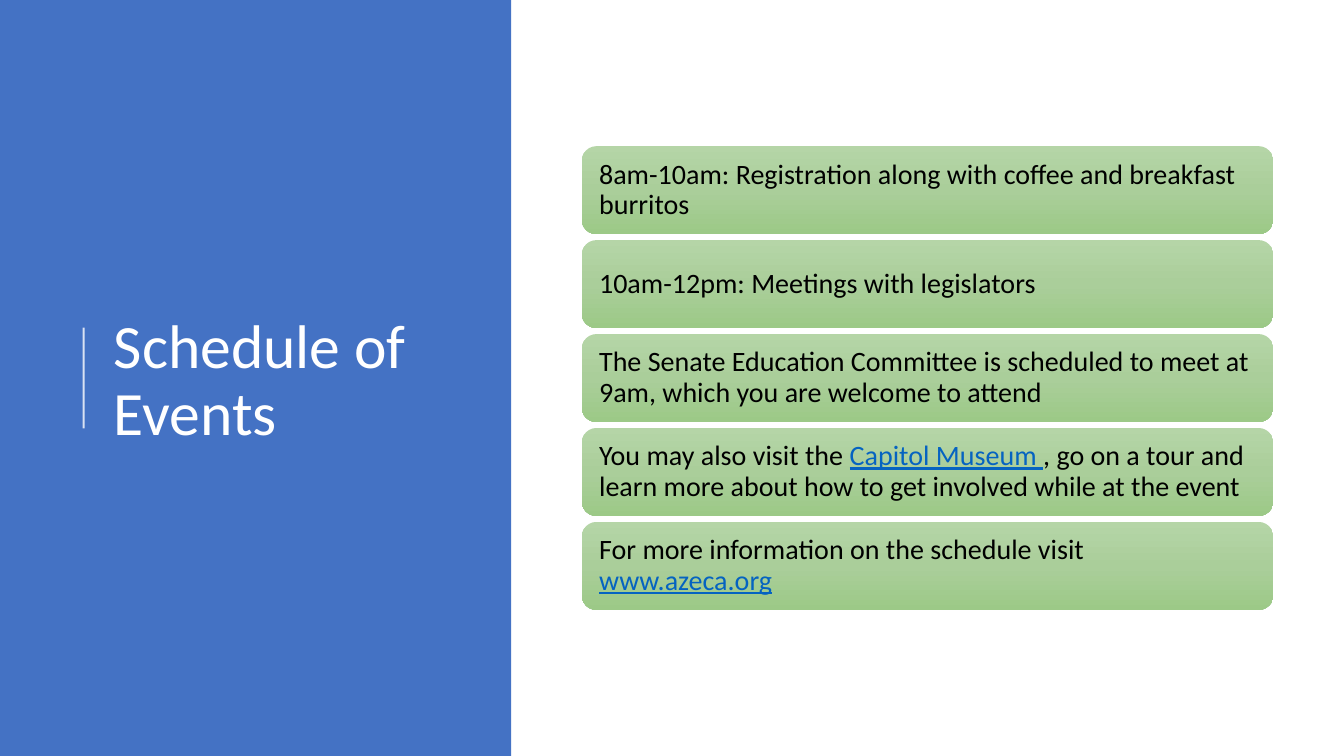
from copy import deepcopy
from dataclasses import dataclass

from lxml import etree
from pptx import Presentation
from pptx.dml.color import RGBColor
from pptx.enum.shapes import MSO_CONNECTOR, MSO_SHAPE
from pptx.enum.text import MSO_ANCHOR, PP_ALIGN
from pptx.oxml.ns import qn
from pptx.util import Inches, Pt


@dataclass(frozen=True)
class Theme:
    font: str = "Calibri"
    title_size: int = 44
    body_size: int = 20
    panel: str = "4472C4"
    light: str = "FFFFFF"
    dark: str = "000000"
    link: str = "0563C1"
    card: tuple = ("B5D5A7", "AACE9A", "9CC987")


THEME = Theme()

# Each event is a list of (text, is_link) pieces
EVENTS = [
    [("8am-10am: Registration along with coffee and breakfast burritos", False)],
    [("10am-12pm: Meetings with legislators", False)],
    [("The Senate Education Committee is scheduled to meet at 9am, "
      "which you are welcome to attend", False)],
    [("You may also visit the ", False), ("Capitol Museum ", True),
     (", go on a tour and learn more about how to get involved "
      "while at the event", False)],
    [("For more information on the schedule visit ", False),
     ("www.azeca.org", True)],
]


def color(value):
    return RGBColor.from_string(value)


def set_font(paragraph, size, value):
    paragraph.line_spacing = 0.9
    paragraph.alignment = PP_ALIGN.LEFT
    paragraph.font.name = THEME.font
    paragraph.font.size = Pt(size)
    paragraph.font.color.rgb = color(value)


def fill_gradient(card):
    """Three evenly spaced stops, from top to bottom."""
    card.fill.gradient()
    card.fill.gradient_angle = 270
    stop_list = card._element.spPr.find(".//" + qn("a:gsLst"))
    stop_list.insert(1, deepcopy(stop_list[0]))
    for index, stop in enumerate(card.fill.gradient_stops):
        stop.position = index / 2
        stop.color.rgb = color(THEME.card[index])


def add_title_panel(slide, left, top, width, height):
    # Coloured background
    panel = slide.shapes.add_shape(MSO_SHAPE.RECTANGLE, Inches(left),
                                   Inches(top), Inches(width), Inches(height))
    panel.shadow.inherit = False
    panel.fill.solid()
    panel.fill.fore_color.rgb = color(THEME.panel)
    panel.line.fill.background()

    # Accent rule, centred on the panel's height
    rule_x, middle = Inches(left + 0.83), top + height / 2
    rule = slide.shapes.add_connector(MSO_CONNECTOR.STRAIGHT,
                                      rule_x, Inches(middle + 0.5),
                                      rule_x, Inches(middle - 0.5))
    rule.line.width = Pt(1.5)
    rule.line.color.rgb = color(THEME.light)
    rule_color = rule._element.spPr.find(".//" + qn("a:srgbClr"))
    etree.SubElement(rule_color, qn("a:alpha"), val="80000")
    etree.SubElement(rule._element.spPr, qn("a:effectLst"))

    # Title
    title = slide.shapes.add_textbox(Inches(left + 1.03), Inches(top + 0.78),
                                     Inches(3.69), Inches(6.02))
    title.text_frame.word_wrap = True
    title.text_frame.vertical_anchor = MSO_ANCHOR.MIDDLE
    heading = title.text_frame.paragraphs[0]
    heading.text = "Schedule of Events"
    set_font(heading, THEME.title_size, THEME.light)


def add_event_card(slide, event, left, top, width, height):
    card = slide.shapes.add_shape(MSO_SHAPE.ROUNDED_RECTANGLE, Inches(left),
                                  Inches(top), Inches(width), Inches(height))
    card.shadow.inherit = False
    card.line.fill.background()
    fill_gradient(card)

    frame = card.text_frame
    frame.word_wrap = True
    frame.vertical_anchor = MSO_ANCHOR.MIDDLE
    frame.margin_left = Inches(0.13)
    frame.margin_right = frame.margin_top = frame.margin_bottom = Inches(0.08)
    entry = frame.paragraphs[0]
    set_font(entry, THEME.body_size, THEME.dark)
    for text, is_link in event:
        piece = entry.add_run()
        piece.text = text
        piece.font.color.rgb = color(THEME.link if is_link else THEME.dark)
        if is_link:
            piece.font.underline = True


def add_event_list(slide, left, top, width, height, gap=0.06):
    card_height = (height - gap * (len(EVENTS) - 1)) / len(EVENTS)
    for index, event in enumerate(EVENTS):
        card_top = top + index * (card_height + gap)
        add_event_card(slide, event, left, card_top, width, card_height)


def main():
    deck = Presentation()
    deck.slide_width, deck.slide_height = Inches(13.33), Inches(7.5)
    slide = deck.slides.add_slide(deck.slide_layouts[6])
    add_title_panel(slide, 0, 0, 5.07, 7.5)
    add_event_list(slide, 5.77, 1.45, 6.86, 4.6)
    deck.save("out.pptx")


if __name__ == "__main__":
    main()
